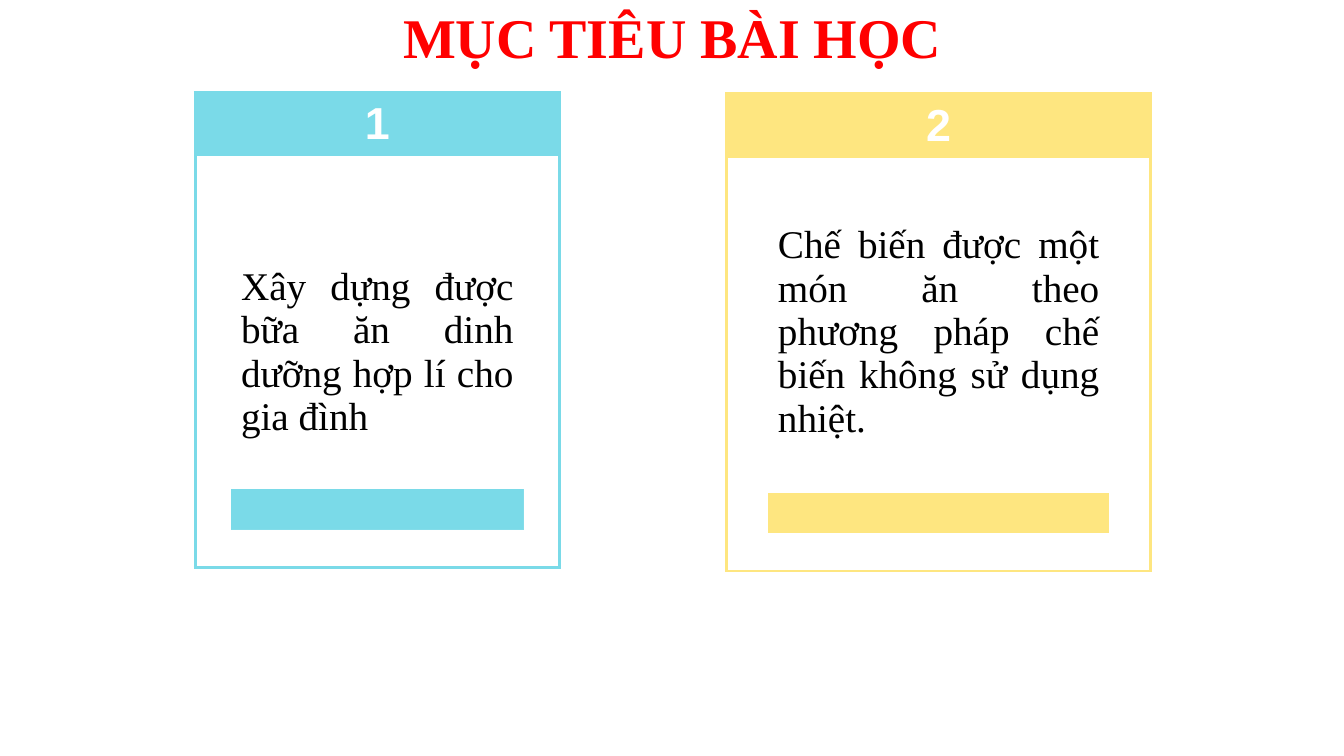
from lxml import etree
from pptx import Presentation
from pptx.dml.color import RGBColor as RGB
from pptx.enum.text import MSO_ANCHOR as ANCHOR, PP_ALIGN as ALIGN
from pptx.oxml.ns import qn
from pptx.util import Pt

COLORS = {"blue": "7ADAE8", "yellow": "FEE680", "red": "FF0000",
          "black": "000000", "white": "FFFFFF"}
HEADER, GOAL, BAR = (0, 1), (2, 1), (5, 1)
ROWS, COLS = 7, 3


def write(tf, text, size, color, font="Times New Roman", bold=False,
          align=ALIGN.CENTER, spacing=None):
    """Put one formatted paragraph into a text frame."""
    tf.word_wrap = True
    p = tf.paragraphs[0]
    p.alignment = align
    p.line_spacing = spacing
    r = p.add_run()
    r.text = text
    r.font.size, r.font.name, r.font.bold = Pt(size), font, bold
    r.font.color.rgb = RGB.from_string(COLORS[color])


def fill_cell(cell, color, alpha=None):
    """Fill a cell, with an optional opacity in percent."""
    cell.fill.solid()
    cell.fill.fore_color.rgb = RGB.from_string(COLORS[color])
    if alpha:
        srgb = cell._tc.tcPr.find(".//" + qn("a:srgbClr"))
        etree.SubElement(srgb, qn("a:alpha"), val=str(alpha * 1000))


def border_cell(cell, color, row, col):
    """Draw only the cell's sides that lie on the card outline."""
    sides = {"L": col == 0, "R": col == COLS - 1,
             "T": row == 0, "B": row == ROWS - 1}
    for i, (side, outer) in enumerate(sides.items()):
        ln = etree.Element(qn(f"a:ln{side}"), w=str(Pt(2.25) if outer else 0))
        if outer:
            solid = etree.SubElement(ln, qn("a:solidFill"))
            etree.SubElement(solid, qn("a:srgbClr"), val=COLORS[color])
        else:
            etree.SubElement(ln, qn("a:noFill"))
        cell._tc.get_or_add_tcPr().insert(i, ln)


def add_title(slide, x, y, w, h, text):
    """Add the centred slide title."""
    tf = slide.shapes.add_textbox(Pt(x), Pt(y), Pt(w), Pt(h)).text_frame
    tf.vertical_anchor = ANCHOR.MIDDLE
    write(tf, text, 40, "red", bold=True, spacing=0.9)


def add_card(slide, x, y, w, h, number, goal, color, side, gap):
    """Add a goal card: numbered header, text and a bar at the foot."""
    table = slide.shapes.add_table(ROWS, COLS, Pt(x), Pt(y), Pt(w), Pt(h)).table
    table.first_row = table.horz_banding = False
    for column, width in zip(table.columns, (side, w - 2 * side, side)):
        column.width = Pt(width)
    fixed = (44, 70, 27, 29, 27)
    heights = (fixed[0], gap, h - gap - sum(fixed), *fixed[1:])
    for row, height in zip(table.rows, heights):
        row.height = Pt(height)
    for row in range(ROWS):
        for col in range(COLS):
            cell = table.cell(row, col)
            if row == 0 or (row, col) == BAR:
                fill_cell(cell, color)
            else:
                fill_cell(cell, "white", 20 if row > 1 else None)
            border_cell(cell, color, row, col)
            cell.vertical_anchor = ANCHOR.MIDDLE
            if (row, col) not in (HEADER, GOAL):
                cell.margin_top = cell.margin_bottom = 0
    table.cell(*GOAL).merge(table.cell(3, 1))
    write(table.cell(*HEADER).text_frame, number, 32, "white", "Arial", True)
    write(table.cell(*GOAL).text_frame, goal, 28, "black", align=ALIGN.JUSTIFY)


def main():
    """Build and save the slide."""
    prs = Presentation()
    prs.slide_width, prs.slide_height = Pt(960), Pt(540)
    slide = prs.slides.add_slide(prs.slide_layouts[6])
    add_title(slide, 24.5, 0, 911.5, 57, "MỤC TIÊU BÀI HỌC")
    add_card(slide, 139.5, 66, 260, 326, "1",
             "Xây dựng được bữa ăn dinh dưỡng hợp lí cho gia đình",
             "blue", side=25.5, gap=69)
    add_card(slide, 519, 67, 303, 326, "2",
             "Chế biến được một món ăn theo phương pháp chế biến "
             "không sử dụng nhiệt.",
             "yellow", side=29.5, gap=37)
    prs.save("out.pptx")


if __name__ == "__main__":
    main()
